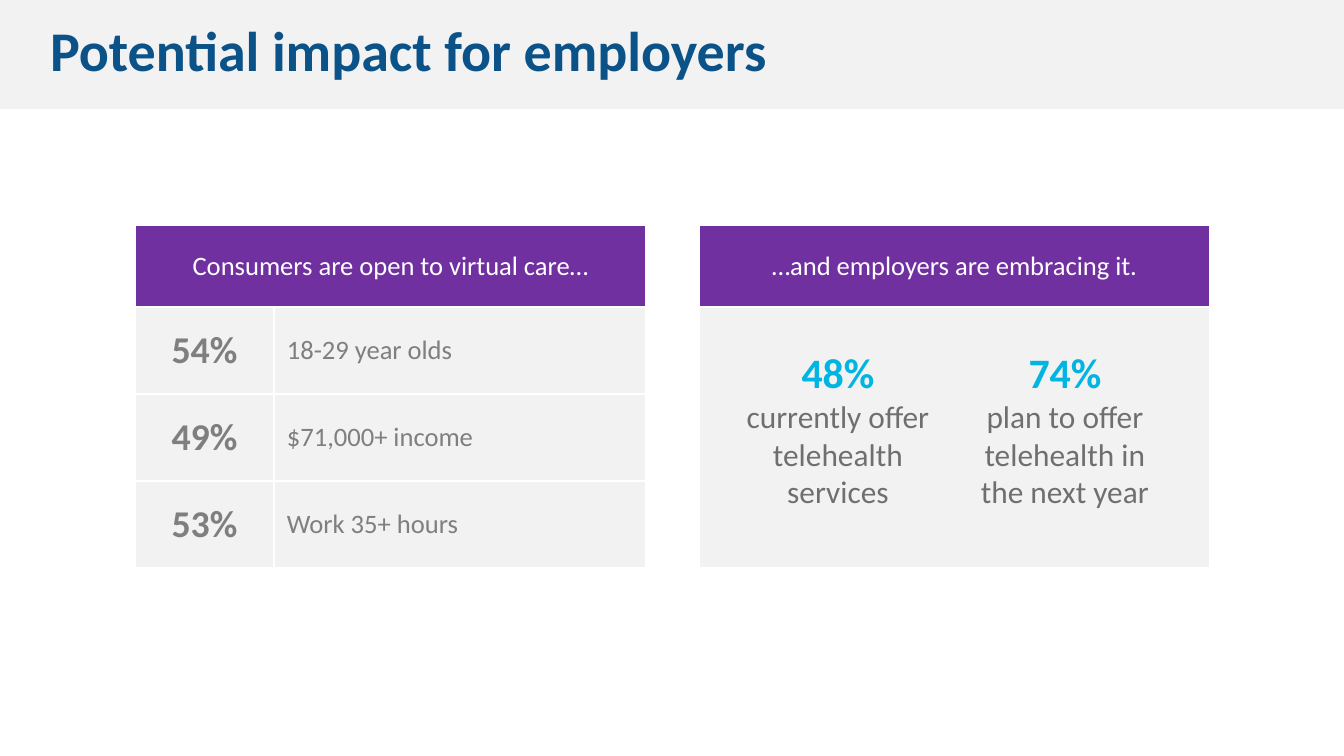
from dataclasses import dataclass

from lxml import etree
from pptx import Presentation
from pptx.dml.color import RGBColor
from pptx.enum.shapes import MSO_SHAPE
from pptx.enum.text import MSO_ANCHOR, PP_ALIGN
from pptx.oxml.ns import qn
from pptx.util import Emu, Pt

FONT = "Calibri"
WHITE, PALE, PURPLE = "FFFFFF", "F2F2F2", "7030A0"
NAVY, CYAN, GREY, DARK_GREY = "0A5287", "00B5E2", "7F7F7F", "6F6F6F"
TABLE_TOP, HEADER_H, ROW_H = 225, 82, 87


@dataclass
class Group:
    percent: str
    label: str


@dataclass
class Callout:
    left: int
    percent: str
    label: str


GROUPS = [
    Group("54%", "18-29 year olds"),
    Group("49%", "$71,000+ income"),
    Group("53%", "Work 35+ hours"),
]
CALLOUTS = [
    Callout(734, "48%", "currently offer telehealth services"),
    Callout(961, "74%", "plan to offer telehealth in the next year"),
]


def px(n: int) -> Emu:
    return Emu(round(n * 914400 / 100.8))


def rgb(color: str) -> RGBColor:
    return RGBColor.from_string(color)


def set_insets(target, left: int, top: int, right: int, bottom: int) -> None:
    target.margin_left, target.margin_top = px(left), px(top)
    target.margin_right, target.margin_bottom = px(right), px(bottom)


def add_run(p, text: str, size: float, color: str, bold: bool = False) -> None:
    r = p.add_run()
    r.text = text
    r.font.name, r.font.size, r.font.bold = FONT, Pt(size), bold
    r.font.color.rgb = rgb(color)


def style_cell(cell, fill: str) -> None:
    """Fill a cell and give it 1 pt white borders."""
    set_insets(cell, 13, 7, 13, 7)
    cell.vertical_anchor = MSO_ANCHOR.MIDDLE
    cell.fill.solid()
    cell.fill.fore_color.rgb = rgb(fill)
    tc_pr = cell._tc.get_or_add_tcPr()
    for i, side in enumerate(("lnL", "lnR", "lnT", "lnB")):
        ln = etree.Element(qn(f"a:{side}"), w=str(Pt(1)))
        solid = etree.SubElement(ln, qn("a:solidFill"))
        etree.SubElement(solid, qn("a:srgbClr"), val=WHITE)
        tc_pr.insert(i, ln)


def write_cell(cell, text: str, size: float, color: str,
               bold: bool = False, align: PP_ALIGN = PP_ALIGN.CENTER) -> None:
    p = cell.text_frame.paragraphs[0]
    p.alignment = align
    add_run(p, text, size, color, bold)


def add_panel(s, left: int, header: str, cols: list[int], rows: list[int]):
    """Add a table with a purple header across all columns."""
    heights = [HEADER_H, *rows]
    table = s.shapes.add_table(len(heights), len(cols), px(left), px(TABLE_TOP),
                               px(sum(cols)), px(sum(heights))).table
    for column, width in zip(table.columns, cols):
        column.width = px(width)
    for i, height in enumerate(heights):
        table.rows[i].height = px(height)
        for j in range(len(cols)):
            style_cell(table.cell(i, j), PALE if i else PURPLE)
    if len(cols) > 1:
        table.cell(0, 0).merge(table.cell(0, len(cols) - 1))
    write_cell(table.cell(0, 0), header, 19, WHITE)
    return table


def add_title(s, text: str) -> None:
    sp = s.shapes.add_shape(MSO_SHAPE.RECTANGLE, 0, 0, px(1344), px(109))
    sp.shadow.inherit = False
    sp.fill.solid()
    sp.fill.fore_color.rgb = rgb(PALE)
    sp.line.fill.background()
    tf = sp.text_frame
    tf.word_wrap = True
    tf.vertical_anchor = MSO_ANCHOR.MIDDLE
    set_insets(tf, 50, 15, 50, 25)
    p = tf.paragraphs[0]
    p.alignment = PP_ALIGN.LEFT
    add_run(p, text, 40, NAVY, True)


def add_callout(s, callout: Callout) -> None:
    tf = s.shapes.add_textbox(px(callout.left), px(342), px(208), px(150)).text_frame
    tf.word_wrap = True
    p = tf.paragraphs[0]
    p.alignment = PP_ALIGN.CENTER
    add_run(p, callout.percent, 29.9, CYAN, True)
    p.add_line_break()
    add_run(p, callout.label, 22.4, DARK_GREY)


def main() -> None:
    prs = Presentation()
    prs.slide_width, prs.slide_height = px(1344), px(756)
    s = prs.slides.add_slide(prs.slide_layouts[6])
    add_title(s, "Potential impact for employers")

    consumers = add_panel(s, 135, "Consumers are open to virtual care…",
                          [139, 372], [ROW_H] * len(GROUPS))
    for i, group in enumerate(GROUPS, start=1):
        write_cell(consumers.cell(i, 0), group.percent, 27, GREY, True)
        write_cell(consumers.cell(i, 1), group.label, 19, GREY, align=PP_ALIGN.LEFT)

    add_panel(s, 699, "…and employers are embracing it.", [511], [ROW_H * len(GROUPS)])
    for callout in CALLOUTS:
        add_callout(s, callout)
    prs.save("out.pptx")


if __name__ == "__main__":
    main()
